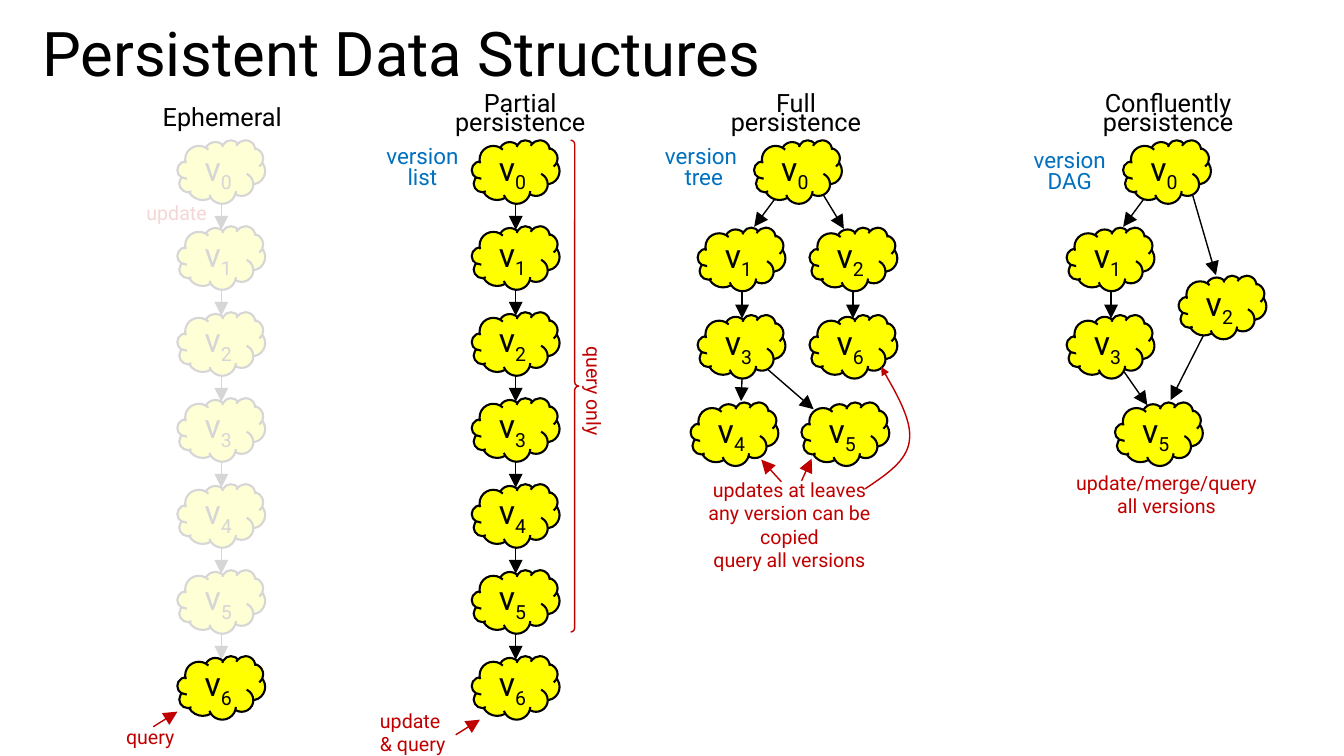
from lxml import etree
from pptx import Presentation, util as u
from pptx.dml.color import RGBColor
from pptx.enum import shapes, text
from pptx.oxml.ns import qn

BLACK, RED, BLUE, YELLOW, WHITE = "000000", "C00000", "0070C0", "FFFF00", "FFFFFF"
FONT = "Roboto"
CLOUD_W, CLOUD_H = 0.87, 0.63
TOP = 1.39
LIST_ROW, TREE_ROW = 0.853, 0.867
EPHEMERAL, PARTIAL = 1.76, 4.68
LEFT, CENTER, RIGHT = text.PP_ALIGN.LEFT, text.PP_ALIGN.CENTER, text.PP_ALIGN.RIGHT

presentation = Presentation()
presentation.slide_width, presentation.slide_height = u.Inches(13.33), u.Inches(7.5)
slide = presentation.slides.add_slide(presentation.slide_layouts[6])


def add_cloud(version, left, top):
    """Draw one version cloud, labelled v with a subscript number."""
    shape = slide.shapes.add_shape(
        shapes.MSO_SHAPE.CLOUD, *map(u.Inches, (left, top, CLOUD_W, CLOUD_H)))
    shape.shadow.inherit = False
    shape.fill.solid()
    shape.fill.fore_color.rgb = RGBColor.from_string(YELLOW)
    shape.line.color.rgb = RGBColor.from_string(BLACK)
    shape.line.width = u.Pt(1.5)
    paragraph = shape.text_frame.paragraphs[0]
    paragraph.alignment = CENTER
    for content in ("v", str(version)):
        run = paragraph.add_run()
        run.text = content
        run.font.name, run.font.size = FONT, u.Pt(24)
        run.font.color.rgb = RGBColor.from_string(BLACK)
    run.font._element.set("baseline", "-25000")


def add_arrow(color, *ends):
    """Draw a straight arrow with a large head."""
    connector = slide.shapes.add_connector(
        shapes.MSO_CONNECTOR.STRAIGHT, *map(u.Inches, ends))
    connector.line.color.rgb = RGBColor.from_string(color)
    connector.line.width = u.Pt(1)
    properties = connector._element.spPr
    etree.SubElement(properties.find(qn("a:ln")), qn("a:tailEnd"),
                     type="triangle", w="lg", len="lg")
    etree.SubElement(properties, qn("a:effectLst"))


# Labels: paragraphs, frame, size, colour, alignment, line spacing, rotation
labels = [
    (["Persistent Data Structures"], (0.32, 0.15, 8.87, 0.83), 44, BLACK, LEFT, 0.9, 0),
    (["Ephemeral"], (1.42, 0.96, 1.57, 0.4), 18, BLACK, CENTER, None, 0),
    (["Partial persistence"], (4.24, 0.92, 1.84, 0.51), 18, BLACK, CENTER, u.Pt(14), 0),
    (["Full", "persistence"], (6.78, 0.92, 2.23, 0.51), 18, BLACK, CENTER, u.Pt(14), 0),
    (["Confluently", "persistence"], (10.64, 0.92, 1.89, 0.51), 18, BLACK, CENTER, u.Pt(14), 0),
    (["version ", "list"], (3.72, 1.42, 0.94, 0.54), 16, BLUE, CENTER, u.Pt(15), 0),
    (["version ", "tree"], (6.47, 1.42, 1.02, 0.54), 16, BLUE, CENTER, u.Pt(15), 0),
    (["version DAG"], (10.14, 1.46, 0.94, 0.53), 16, BLUE, CENTER, u.Pt(15), 0),
    (["update"], (0.97, 1.94, 1.18, 0.34), 14, RED, RIGHT, None, 0),
    (["query"], (0.65, 7.14, 1.18, 0.34), 14, RED, RIGHT, None, 0),
    (["query only"], (5.3, 3.66, 1.18, 0.34), 14, RED, RIGHT, None, 90),
    (["update \n& query"], (3.67, 6.98, 0.87, 0.57), 14, RED, LEFT, None, 0),
    (["updates at leaves", "any version can be copied\nquery all versions"],
     (6.69, 4.69, 2.28, 1.04), 14, RED, CENTER, None, 0),
    (["update/merge/query\nall versions"], (10.43, 4.62, 2.28, 0.57), 14, RED, CENTER, None, 0),
]
for paragraphs, frame, size, color, alignment, spacing, rotation in labels:
    box = slide.shapes.add_textbox(*map(u.Inches, frame))
    box.rotation = rotation
    text_frame = box.text_frame
    text_frame.word_wrap = True
    if size == 44:
        text_frame.vertical_anchor = text.MSO_ANCHOR.MIDDLE
    else:
        text_frame.auto_size = text.MSO_AUTO_SIZE.SHAPE_TO_FIT_TEXT
    for index, content in enumerate(paragraphs):
        paragraph = text_frame.add_paragraph() if index else text_frame.paragraphs[0]
        paragraph.alignment, paragraph.line_spacing = alignment, spacing
        for number, line in enumerate(content.split("\n")):
            if number:
                paragraph.add_line_break()
            run = paragraph.add_run()
            run.text = line
            run.font.name, run.font.size = FONT, u.Pt(size)
            run.font.color.rgb = RGBColor.from_string(color)

# Version lists: seven clouds in a column; the ephemeral past is faded
for left in (EPHEMERAL, PARTIAL):
    tops = [TOP + row * LIST_ROW for row in range(7)]
    middle = left + CLOUD_W / 2
    for version, top in enumerate(tops[:-1]):
        add_cloud(version, left, top)
    for top in tops[:-1]:
        add_arrow(BLACK, middle, top + CLOUD_H, middle, top + CLOUD_H + 0.26)
    if left == EPHEMERAL:
        veil = slide.shapes.add_shape(
            shapes.MSO_SHAPE.RECTANGLE, *map(u.Inches, (1.44, 1.31, 1.26, 5.28)))
        veil.shadow.inherit = False
        veil.line.fill.background()
        veil.fill.solid()
        veil.fill.fore_color.rgb = RGBColor.from_string(WHITE)
        veil_color = veil._element.spPr.find(qn("a:solidFill"))[0]
        etree.SubElement(veil_color, qn("a:alpha"), val="84000")
    add_cloud(6, left, tops[-1])

brace = slide.shapes.add_shape(
    shapes.MSO_SHAPE.RIGHT_BRACE, *map(u.Inches, (5.66, TOP, 0.08, 4.88)))
brace.shadow.inherit = False
brace.adjustments[0], brace.adjustments[1] = 0.502, 0.5
brace.fill.background()
brace.line.color.rgb = RGBColor.from_string(RED)
brace.line.width = u.Pt(1)

# Version tree and version DAG: slanted arrows lie behind the clouds
slanted_arrows = [
    (7.62, 3.67, 8.07, 4.06), (8.17, 1.94, 8.37, 2.27), (7.71, 1.94, 7.48, 2.25),
    (11.15, 3.69, 11.38, 4.02), (11.83, 1.94, 12.06, 2.73),
    (11.94, 3.32, 11.61, 3.97), (11.37, 1.94, 11.14, 2.25),
]
for ends in slanted_arrows:
    add_arrow(BLACK, *ends)

tree_clouds = [(0, 7.48, 0), (1, 6.92, 1), (2, 8.03, 1), (3, 6.92, 2),
               (6, 8.03, 2), (4, 6.85, 3), (5, 7.95, 3)]
dag_clouds = [(0, 11.14, 0), (1, 10.58, 1), (2, 11.69, 1.55), (3, 10.58, 2), (5, 11.06, 3)]
for version, left, row in tree_clouds + dag_clouds:
    add_cloud(version, left, TOP + row * TREE_ROW)

for ends in [(7.36, 2.88, 7.36, 3.16), (8.46, 2.88, 8.46, 3.16),
             (7.36, 3.75, 7.35, 3.98), (11.02, 2.88, 11.02, 3.16)]:
    add_arrow(BLACK, *ends)
for ends in [(1.52, 7.21, 1.76, 7.06), (4.52, 7.29, 4.76, 7.14),
             (7.75, 4.78, 7.55, 4.56), (7.95, 4.77, 8.05, 4.55)]:
    add_arrow(RED, *ends)

# Curved arrow from the leaf note up to v6, sampled from two cubic curves
curves = [((8.58, 4.85), (8.79, 4.71), (9, 4.57), (9.02, 4.37)),
          ((9.02, 4.37), (9.05, 4.17), (8.89, 3.9), (8.74, 3.64))]
STEPS = 16
points = [tuple(map(u.Inches, curves[0][0]))]
for curve in curves:
    for step in range(1, STEPS + 1):
        t = step / STEPS
        weights = ((1 - t) ** 3, 3 * t * (1 - t) ** 2, 3 * t * t * (1 - t), t ** 3)
        points.append(tuple(
            u.Inches(sum(w * point[axis] for w, point in zip(weights, curve)))
            for axis in (0, 1)))
builder = slide.shapes.build_freeform(*points[0])
builder.add_line_segments(points[1:], close=False)
curved_arrow = builder.convert_to_shape()
curved_arrow.shadow.inherit = False
curved_arrow.fill.background()
curved_arrow.line.color.rgb = RGBColor.from_string(RED)
curved_arrow.line.width = u.Pt(1)
curved_outline = curved_arrow._element.spPr.find(qn("a:ln"))
etree.SubElement(curved_outline, qn("a:tailEnd"), type="triangle")

presentation.save("out.pptx")
